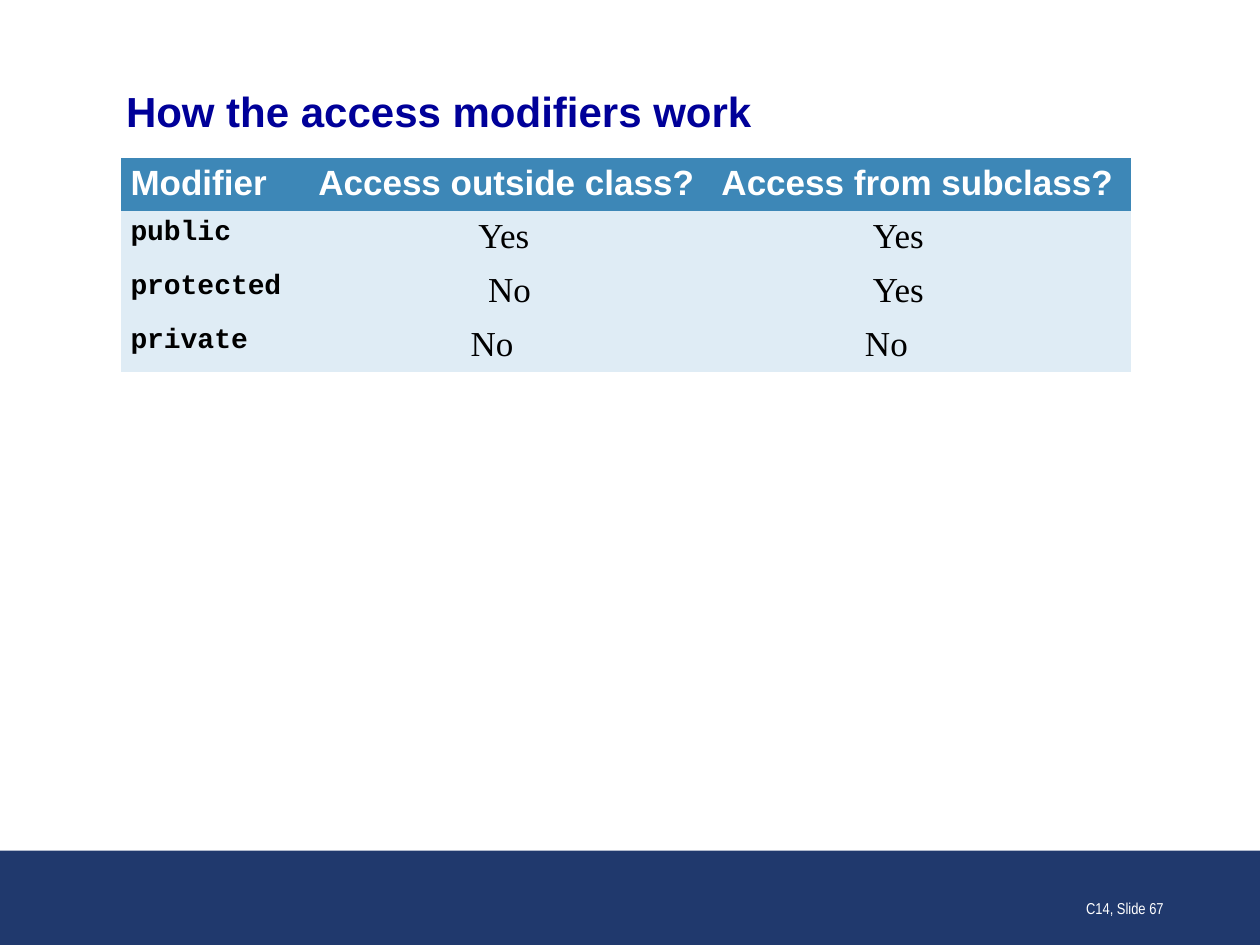
from pptx import Presentation
from pptx.dml.color import RGBColor
from pptx.enum import shapes, text
from pptx.oxml import ns
from pptx.util import Pt

WHITE = RGBColor(0xFF, 0xFF, 0xFF)
BLACK = RGBColor(0x00, 0x00, 0x00)
TITLE_BLUE = RGBColor(0x00, 0x00, 0x99)
FOOTER_BLUE = RGBColor(0x20, 0x39, 0x6D)
HEADER_BLUE = RGBColor(0x3D, 0x87, 0xB7)
ROW_BLUE = RGBColor(0xDF, 0xEC, 0xF5)

NO_STYLE_NO_GRID = "{2D5ABB26-0587-4C30-8999-92F81FD0307C}"
COLUMN_WIDTHS = (107.3, 230.4, 239)
ROW_HEIGHT = 30.6
HEADINGS = ("Modifier", "Access outside class?", "Access from subclass?")
# Each answer is paired with its left indent in points.
MODIFIERS = (
    ("public", ("Yes", 91.5), ("Yes", 86.5)),
    ("protected", ("No", 97), ("Yes", 86.5)),
    ("private", ("No", 87), ("No", 82)),
)


def format_text(paragraph, font_name, size, color, bold=False):
    for run in paragraph.runs:
        run.font.name = font_name
        run.font.size = Pt(size)
        run.font.color.rgb = color
        run.font.bold = bold


def set_margins(text_frame, margin):
    text_frame.margin_left = text_frame.margin_right = Pt(margin)
    text_frame.margin_top = text_frame.margin_bottom = Pt(margin)


def fill_cell(cell, content, fill, font_name, size, color, bold, indent=0):
    cell.fill.solid()
    cell.fill.fore_color.rgb = fill
    cell.margin_left = cell.margin_right = Pt(5.2)
    cell.margin_top = cell.margin_bottom = Pt(3.6)
    paragraph = cell.text_frame.paragraphs[0]
    paragraph.text = content
    if indent:
        properties = paragraph._p.get_or_add_pPr()
        properties.set("marL", str(Pt(indent)))
        properties.set("indent", "0")
    format_text(paragraph, font_name, size, color, bold)


def add_title(slide, content):
    title = slide.shapes.title
    title.left, title.top, title.width, title.height = Pt(72), Pt(49), Pt(576), Pt(29)
    text_frame = title.text_frame
    text_frame.text = content
    text_frame.vertical_anchor = text.MSO_ANCHOR.MIDDLE
    set_margins(text_frame, 0)
    paragraph = text_frame.paragraphs[0]
    paragraph.alignment = text.PP_ALIGN.LEFT
    format_text(paragraph, "Arial", 24, TITLE_BLUE, bold=True)


def add_modifier_table(slide):
    row_count = len(MODIFIERS) + 1
    frame = slide.shapes.add_table(
        row_count, len(HEADINGS), Pt(69.4), Pt(90.2),
        Pt(sum(COLUMN_WIDTHS)), Pt(ROW_HEIGHT * row_count))
    table = frame.table
    table.horz_banding = False
    table._tbl.tblPr.find(ns.qn("a:tableStyleId")).text = NO_STYLE_NO_GRID
    for column, width in zip(table.columns, COLUMN_WIDTHS):
        column.width = Pt(width)
    for row in table.rows:
        row.height = Pt(ROW_HEIGHT)

    for column, heading in enumerate(HEADINGS):
        fill_cell(table.cell(0, column), heading, HEADER_BLUE, "Arial", 20, WHITE, True)
    for row, (modifier, *answers) in enumerate(MODIFIERS, start=1):
        fill_cell(table.cell(row, 0), modifier, ROW_BLUE, "Courier New", 16, BLACK, True)
        for column, (answer, indent) in enumerate(answers, start=1):
            fill_cell(table.cell(row, column), answer, ROW_BLUE,
                      "Times New Roman", 20, BLACK, False, indent)


def add_footer(slide, content):
    bar = slide.shapes.add_shape(
        shapes.MSO_SHAPE.RECTANGLE, Pt(0), Pt(486), Pt(720), Pt(54))
    bar.shadow.inherit = False
    bar.fill.solid()
    bar.fill.fore_color.rgb = FOOTER_BLUE
    bar.line.fill.background()

    label = slide.shapes.add_textbox(Pt(522), Pt(492), Pt(150), Pt(36))
    text_frame = label.text_frame
    text_frame.word_wrap = True
    text_frame.vertical_anchor = text.MSO_ANCHOR.BOTTOM
    text_frame.text = content
    paragraph = text_frame.paragraphs[0]
    paragraph.alignment = text.PP_ALIGN.RIGHT
    format_text(paragraph, "Arial Narrow", 9, WHITE)


def main():
    presentation = Presentation()
    presentation.slide_width, presentation.slide_height = Pt(720), Pt(540)
    slide = presentation.slides.add_slide(presentation.slide_layouts[5])
    add_title(slide, "How the access modifiers work")
    add_modifier_table(slide)
    add_footer(slide, "C14, Slide 67")
    presentation.save("out.pptx")


if __name__ == "__main__":
    main()
